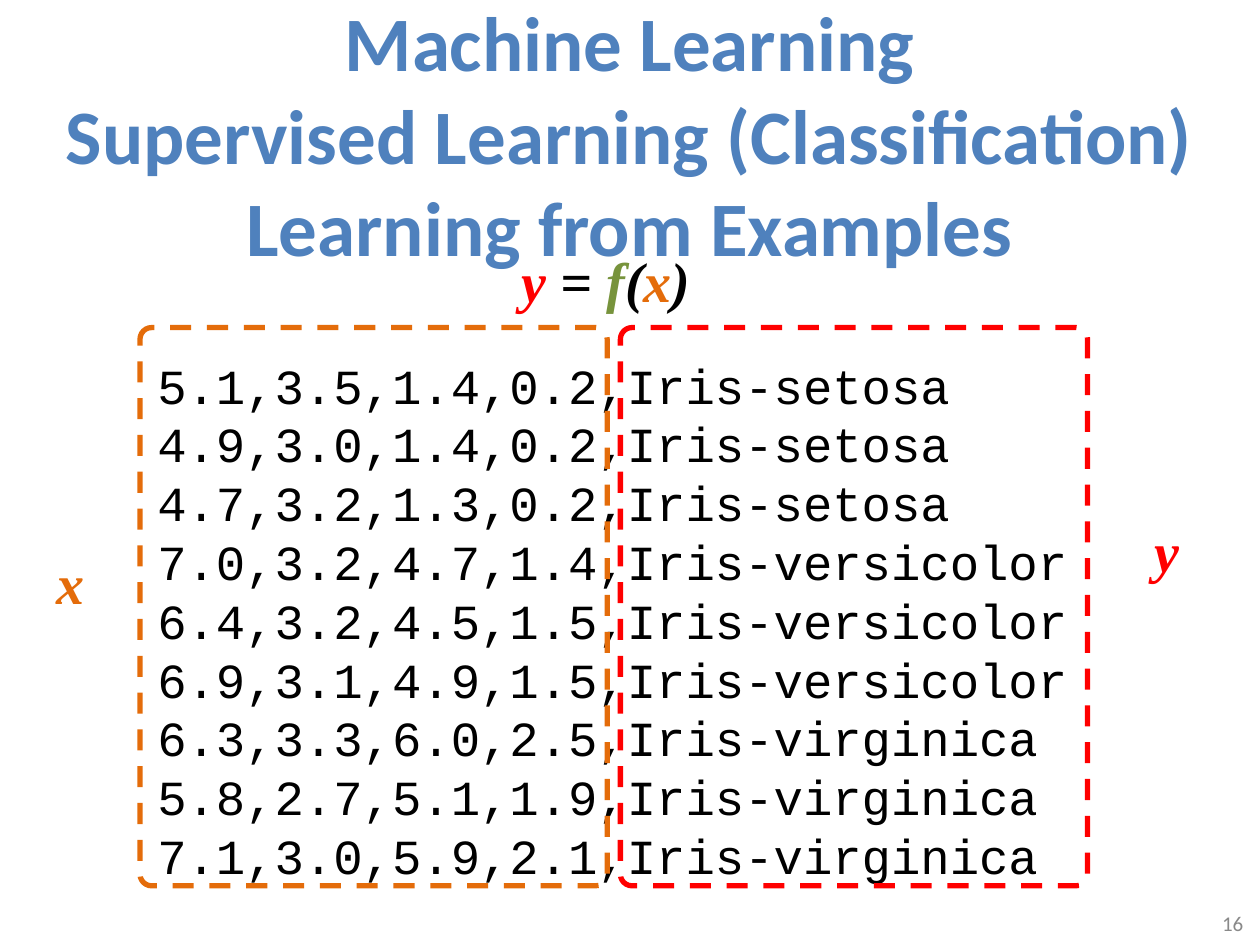
from dataclasses import dataclass

import pptx
import pptx.dml.color
import pptx.enum.dml
import pptx.enum.shapes
import pptx.enum.text
import pptx.util

Pt = pptx.util.Pt
ALIGN = pptx.enum.text.PP_ALIGN
ANCHOR = pptx.enum.text.MSO_ANCHOR


@dataclass(frozen=True)
class Theme:
    heading: str = "4F81BD"
    features: str = "E46C0A"
    label: str = "FF0000"
    function: str = "77933C"
    ink: str = "000000"
    muted: str = "898989"
    heading_size: float = 44
    math_size: float = 32
    data_size: float = 28
    number_size: float = 12
    data_pitch: float = 33.6
    heading_font: str = "Calibri"
    math_font: str = "Times New Roman"
    data_font: str = "Courier New"


THEME = Theme()

HEADING = ["Machine Learning", "Supervised Learning (Classification)",
           "Learning from Examples"]
SAMPLES = [
    "5.1,3.5,1.4,0.2,Iris-setosa",
    "4.9,3.0,1.4,0.2,Iris-setosa",
    "4.7,3.2,1.3,0.2,Iris-setosa",
    "7.0,3.2,4.7,1.4,Iris-versicolor",
    "6.4,3.2,4.5,1.5,Iris-versicolor",
    "6.9,3.1,4.9,1.5,Iris-versicolor",
    "6.3,3.3,6.0,2.5,Iris-virginica",
    "5.8,2.7,5.1,1.9,Iris-virginica",
    "7.1,3.0,5.9,2.1,Iris-virginica",
]
FORMULA = [("y", THEME.label), (" = ", THEME.ink), ("f", THEME.function),
           ("(", THEME.ink), ("x", THEME.features), (")", THEME.ink)]


def rgb(value):
    return pptx.dml.color.RGBColor.from_string(value)


def style(font, color, **values):
    font.color.rgb = rgb(color)
    for name, value in values.items():
        setattr(font, name, value)


def add_text_box(slide, box, wrap=True):
    text_box = slide.shapes.add_textbox(*map(Pt, box))
    text_box.text_frame.word_wrap = wrap
    return text_box.text_frame


def place_heading(slide, box):
    heading = slide.shapes.title
    for side, length in zip(("left", "top", "width", "height"), box):
        setattr(heading, side, Pt(length))
    frame = heading.text_frame
    frame.vertical_anchor = ANCHOR.MIDDLE
    frame.text = "\v".join(HEADING)
    paragraph = frame.paragraphs[0]
    paragraph.alignment = ALIGN.CENTER
    for run in paragraph.runs:
        style(run.font, THEME.heading, name=THEME.heading_font,
              size=Pt(THEME.heading_size), bold=True)


def place_math(slide, box, symbols):
    """Write (text, colour) symbols in a row, as a formula."""
    paragraph = add_text_box(slide, box, wrap=False).paragraphs[0]
    for symbol, color in symbols:
        run = paragraph.add_run()
        run.text = symbol
        style(run.font, color, name=THEME.math_font,
              size=Pt(THEME.math_size), bold=True, italic=True)


def place_samples(slide, box):
    frame = add_text_box(slide, box)
    frame.margin_top = Pt(7)
    frame.text = "\v".join(SAMPLES)
    paragraph = frame.paragraphs[0]
    paragraph.line_spacing = Pt(THEME.data_pitch)
    for run in paragraph.runs:
        style(run.font, THEME.ink, name=THEME.data_font,
              size=Pt(THEME.data_size))


def place_frames(slide, box, gap):
    """Split the box into two dashed frames: features, then label."""
    left, top, width, height = box
    frame_width = (width - gap) / 2
    for column, color in enumerate((THEME.features, THEME.label)):
        frame = slide.shapes.add_shape(
            pptx.enum.shapes.MSO_SHAPE.ROUNDED_RECTANGLE,
            Pt(left + column * (frame_width + gap)), Pt(top),
            Pt(frame_width), Pt(height))
        frame.adjustments[0] = 0.025
        frame.shadow.inherit = False
        frame.fill.background()
        frame.line.color.rgb = rgb(color)
        frame.line.width = Pt(3)
        frame.line.dash_style = pptx.enum.dml.MSO_LINE.DASH


def place_slide_number(slide, box, number):
    frame = add_text_box(slide, box)
    frame.vertical_anchor = ANCHOR.MIDDLE
    frame.text = str(number)
    paragraph = frame.paragraphs[0]
    paragraph.alignment = ALIGN.RIGHT
    style(paragraph.runs[0].font, THEME.muted, name=THEME.heading_font,
          size=Pt(THEME.number_size))


def main():
    deck = pptx.Presentation()
    deck.slide_width, deck.slide_height = Pt(720), Pt(540)
    slide = deck.slides.add_slide(deck.slide_layouts.get_by_name("Title Only"))

    place_heading(slide, (19.5, 0, 681, 152.5))
    place_slide_number(slide, (549.5, 513.5, 168, 28.5), 16)
    place_samples(slide, (82.8, 196, 607, 312.5))
    place_frames(slide, (80, 187.2, 541.5, 319), gap=7.5)
    place_math(slide, (25, 309.6, 31, 46), [("x", THEME.features)])
    place_math(slide, (652.5, 291.6, 29, 46), [("y", THEME.label)])
    place_math(slide, (291, 137.5, 114.5, 46), FORMULA)

    deck.save("out.pptx")


if __name__ == "__main__":
    main()
